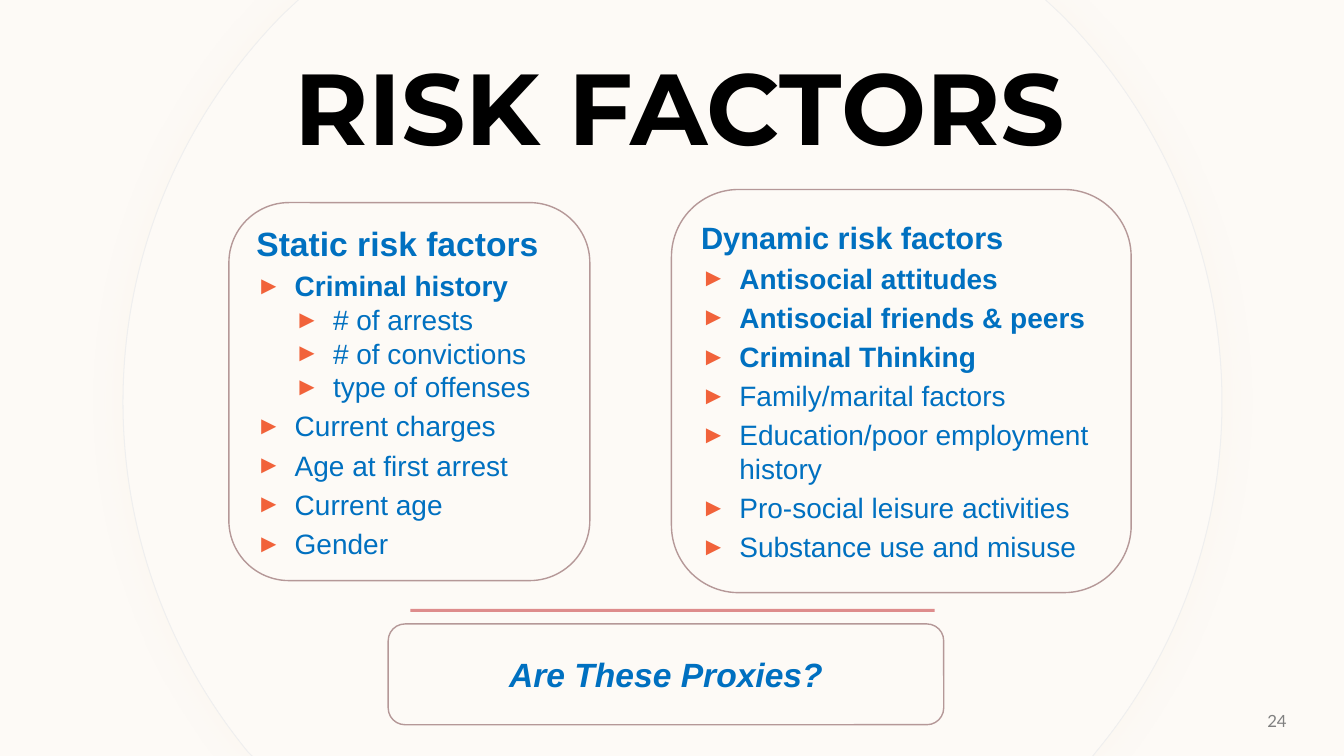
from lxml import etree
from pptx import Presentation
from pptx.dml.color import RGBColor
from pptx.enum.shapes import MSO_SHAPE
from pptx.enum.text import MSO_ANCHOR, PP_ALIGN
from pptx.oxml.ns import qn
from pptx.util import Pt

PX = 9144
WIDTH, HEIGHT = 1333, 750
RECT = MSO_SHAPE.RECTANGLE
ROUNDED = MSO_SHAPE.ROUNDED_RECTANGLE
MIDDLE = MSO_ANCHOR.MIDDLE
LEFT, CENTER, RIGHT = PP_ALIGN.LEFT, PP_ALIGN.CENTER, PP_ALIGN.RIGHT
COLORS = {
    "paper": "FDFAF6",
    "rim": "EFEFEF",
    "glow": "EFD8B9",
    "title": "000000",
    "rule": "DE8C8C",
    "frame": "B59898",
    "text": "0070C0",
    "bullet": "F1623A",
    "number": "808080",
}
STATIC_FACTORS = [
    ("Criminal history", 0, True),
    ("# of arrests", 1, False),
    ("# of convictions", 1, False),
    ("type of offenses", 1, False),
    ("Current charges", 0, False),
    ("Age at first arrest", 0, False),
    ("Current age", 0, False),
    ("Gender", 0, False),
]
DYNAMIC_FACTORS = [
    ("Antisocial attitudes", 0, True),
    ("Antisocial friends & peers", 0, True),
    ("Criminal Thinking", 0, True),
    ("Family/marital factors", 0, False),
    ("Education/poor employment history", 0, False),
    ("Pro-social leisure activities", 0, False),
    ("Substance use and misuse", 0, False),
]


def rgb(name):
    return RGBColor.from_string(COLORS[name])


def emu(box):
    return [length * PX for length in box]


def add_run(paragraph, text, size, color="text", font="Arial", bold=False, italic=False):
    run = paragraph.add_run()
    run.text = text
    run.font.size = Pt(size)
    run.font.name = font
    run.font.bold = bold
    run.font.italic = italic
    run.font.color.rgb = rgb(color)


def add_bullet(paragraph, level):
    properties = paragraph._p.get_or_add_pPr()
    properties.set("marL", str(38 * (level + 1) * PX))
    properties.set("indent", str(-38 * PX))
    color = etree.SubElement(properties, qn("a:buClr"))
    etree.SubElement(color, qn("a:srgbClr"), val=COLORS["bullet"])
    etree.SubElement(properties, qn("a:buSzPct"), val="90000")
    etree.SubElement(properties, qn("a:buFont"), typeface="Arial")
    etree.SubElement(properties, qn("a:buChar"), char="►")


def add_glow(shape):
    effects = etree.SubElement(shape._element.spPr, qn("a:effectLst"))
    glow = etree.SubElement(effects, qn("a:outerShdw"), blurRad=str(Pt(24)), dist="0",
                            algn="ctr", rotWithShape="0")
    color = etree.SubElement(glow, qn("a:srgbClr"), val=COLORS["glow"])
    etree.SubElement(color, qn("a:alpha"), val="11000")


def bend(shape, first, count):
    segments = list(shape._element.iter(qn("a:lnTo")))
    for start in range(first, first + 3 * count, 3):
        curve = etree.Element(qn("a:cubicBezTo"))
        segments[start].addprevious(curve)
        for segment in segments[start:start + 3]:
            curve.append(segment[0])
            segment.getparent().remove(segment)


def backdrop_disc(slide, box, rimmed):
    left, top, width, height = box
    right, bottom = left + width, top + height
    points = [
        (left + 174, top), (right - 175, top), (right - 160, top + 14),
        (right - 61, top + 113), (right, top + 249), (right, top + 399),
        (right, top + 531), (right - 47, top + 652), (right - 125, bottom - 4),
        (right - 128, bottom), (left + 128, bottom), (left + 124, bottom - 4),
        (left + 47, top + 652), (left, top + 531), (left, top + 399),
        (left, top + 249), (left + 61, top + 113), (left + 159, top + 14),
    ]
    builder = slide.shapes.build_freeform(*points[0], scale=PX)
    builder.add_line_segments(points[1:], close=True)
    disc = builder.convert_to_shape()
    bend(disc, 11, 2)
    bend(disc, 2, 2)
    disc.fill.solid()
    disc.fill.fore_color.rgb = rgb("paper")
    if rimmed:
        disc.line.color.rgb = rgb("rim")
        disc.line.width = Pt(0.75)
        add_glow(disc)
    else:
        disc.line.fill.background()
        disc.shadow.inherit = False


def label(slide, box, text, align, **style):
    frame = slide.shapes.add_textbox(*emu(box)).text_frame
    frame.word_wrap = True
    frame.vertical_anchor = MIDDLE
    paragraph = frame.paragraphs[0]
    paragraph.alignment = align
    add_run(paragraph, text, **style)
    return paragraph


def rule(slide, box):
    bar = slide.shapes.add_shape(RECT, *emu(box))
    bar.shadow.inherit = False
    bar.fill.solid()
    bar.fill.fore_color.rgb = rgb("rule")
    bar.line.fill.background()


def card(slide, box):
    outline = slide.shapes.add_shape(ROUNDED, *emu(box))
    outline.shadow.inherit = False
    outline.fill.background()
    outline.line.color.rgb = rgb("frame")
    outline.line.width = Pt(1)
    frame = outline.text_frame
    frame.word_wrap = True
    frame.vertical_anchor = MIDDLE
    return frame


def factor_card(slide, box, heading, heading_size, factors, space_after=0):
    frame = card(slide, box)
    head = frame.paragraphs[0]
    head.alignment = LEFT
    head.space_before = Pt(4)
    add_run(head, heading, heading_size, bold=True)
    for text, level, bold in factors:
        item = frame.add_paragraph()
        item.alignment = LEFT
        item.level = level
        item.space_before = Pt(0 if level else 4)
        if text == factors[-1][0]:
            item.space_after = Pt(space_after)
        add_bullet(item, level)
        add_run(item, text, 20, bold=bold)


def question_card(slide, box, question):
    paragraph = card(slide, box).paragraphs[0]
    paragraph.alignment = CENTER
    add_run(paragraph, question, 24, bold=True, italic=True)


def main():
    deck = Presentation()
    deck.slide_width, deck.slide_height = WIDTH * PX, HEIGHT * PX
    slide = deck.slides.add_slide(deck.slide_layouts[6])
    slide.background.fill.solid()
    slide.background.fill.fore_color.rgb = rgb("paper")
    backdrop_disc(slide, (122, 0, 1090, 750), True)
    backdrop_disc(slide, (123, 0, 1088, 750), False)
    title = label(slide, (174, 52, 1000, 120), "RISK FACTORS", CENTER,
                  size=72, color="title", font="Montserrat", bold=True)
    title.line_spacing = 0.9
    rule(slide, (407, 604, 520, 3))
    number = label(slide, (1147, 695, 139, 40), "24", RIGHT,
                   size=12, color="number", font="Lato")
    number.space_after = Pt(6)
    factor_card(slide, (666, 188, 456, 400), "Dynamic risk factors", 22, DYNAMIC_FACTORS, 6)
    factor_card(slide, (227, 201, 358, 375), "Static risk factors", 24, STATIC_FACTORS)
    question_card(slide, (385, 619, 551, 100), "Are These Proxies?")
    deck.save("out.pptx")


if __name__ == "__main__":
    main()
